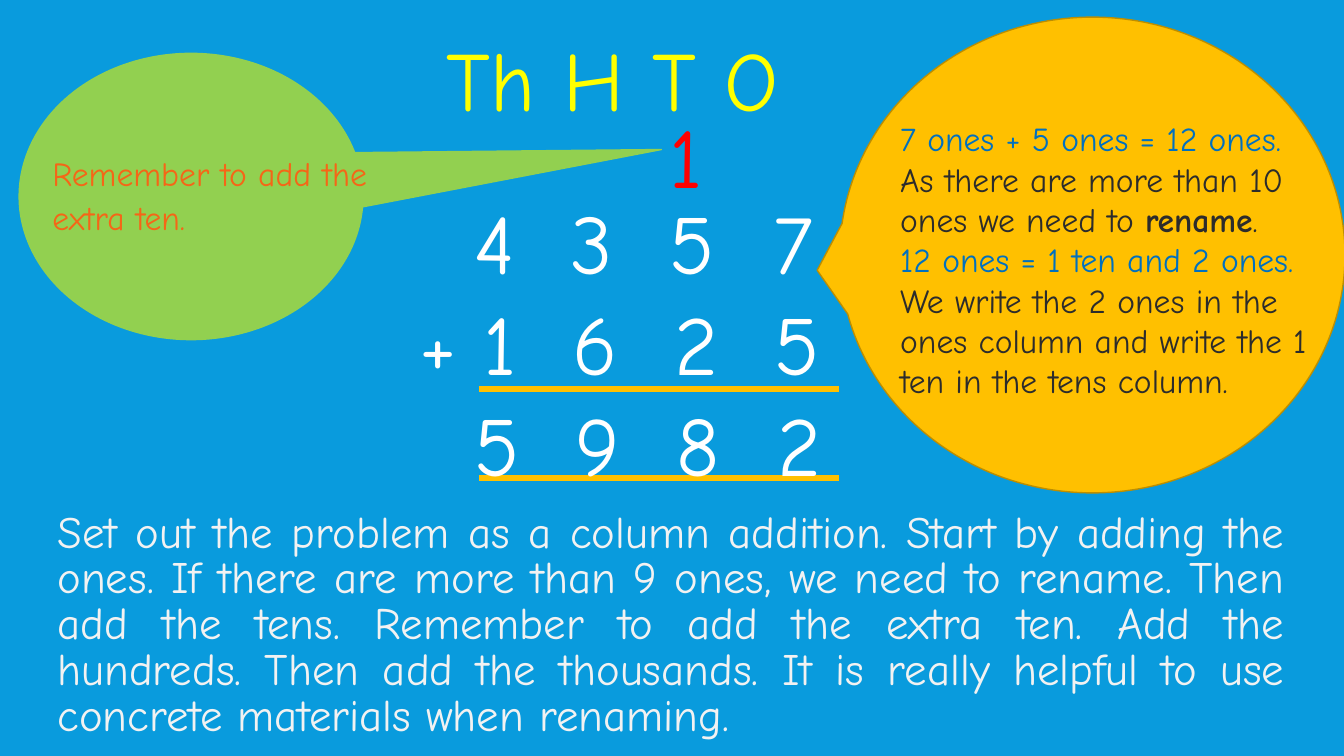
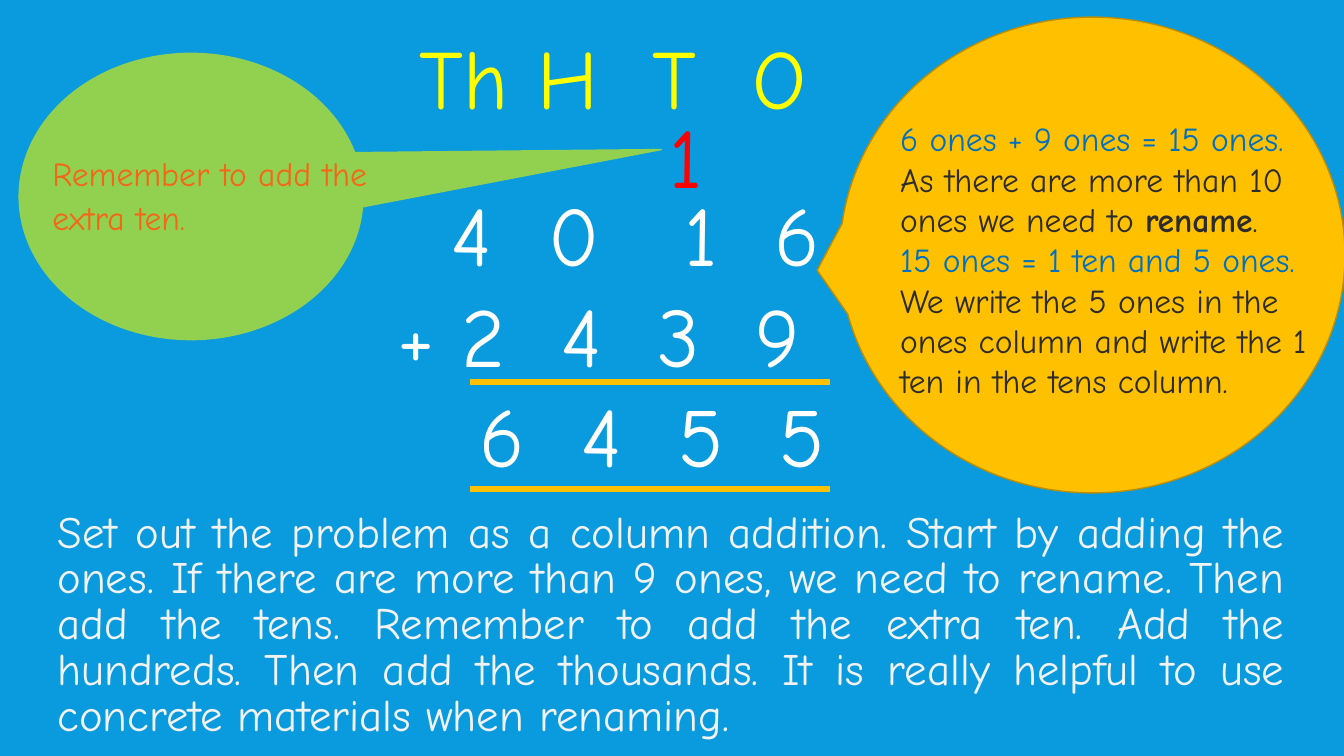
from pptx import Presentation
from pptx import util as u
from pptx.dml.color import RGBColor
from pptx.enum import shapes, text
from pptx.oxml.ns import qn
from lxml import etree


class Theme:
    font = "Comic Neue"
    back = "099BDD"
    head = "FFFF00"
    digit = "FFFFFF"
    carry = "FF0000"
    gold = "FFC000"
    rim = "BD8E00"
    green = "92D050"
    hint = "F56617"
    sum = "0070C0"
    dark = "2C2C2C"
    pale = "F2F2F2"
    big = 60
    mid = 32
    small = 24


def place(shape, box):
    shape.left, shape.top, shape.width, shape.height = map(u.Inches, box)
    return shape


def write(shape, size, lines, stops=(), anchor=text.MSO_ANCHOR.TOP):
    frame = shape.text_frame
    frame.word_wrap = True
    frame.auto_size = text.MSO_AUTO_SIZE.NONE
    frame.vertical_anchor = anchor
    for n, (words, color) in enumerate(lines):
        para = frame.add_paragraph() if n else frame.paragraphs[0]
        para.alignment = text.PP_ALIGN.LEFT
        for k, part in enumerate(words.split("*")):
            run = para.add_run()
            run.text = part
            run.font.bold = k % 2 == 1
        for font in [para.font] + [run.font for run in para.runs]:
            font.name = Theme.font
            font.size = u.Pt(size)
            font.color.rgb = RGBColor.from_string(color)
        if n < len(stops):
            tabs = etree.Element(qn("a:tabLst"))
            for stop in stops[n]:
                gap = u.Inches(stop) - shape.left - frame.margin_left
                etree.SubElement(tabs, qn("a:tab"), pos=str(int(gap)), algn="ctr")
            para._p.pPr.find(qn("a:defRPr")).addprevious(tabs)
    return frame.paragraphs[0]


STEPS = (
    "Set out the problem as a column addition. Start by adding the ones. "
    "If there are more than 9 ones, we need to rename. Then add the tens. "
    "Remember to add the extra ten. Add the hundreds. Then add the thousands. "
    "It is really helpful to use concrete materials when renaming."
)

SUMS = [
    dict(
        head="Th H T O", spot=(4.33, 0.22), cols=[],
        rows=["\t4\t3\t5\t7", "+\t1\t6\t2\t5", "\t5\t9\t8\t2"], grid=(4.06, 1.84),
        stops=[(4.91, 5.87, 6.87, 7.87), (4.96, 5.91, 6.91, 7.91), (4.93, 5.93, 6.93, 7.93)],
        rule=4.75, levels=(3.86, 4.74), ones=(7, 5),
    ),
    dict(
        head="\tTh\tH\tT\tO", spot=(4.06, 0.2), cols=[(4.57, 5.63, 6.69, 7.73)],
        rows=["\t4\t0\t1\t6", "+\t2\t4\t3\t9", "\t6\t4\t5\t5"], grid=(3.84, 1.76),
        stops=[(4.68, 5.70, 6.96, 7.91), (4.80, 5.77, 6.73, 7.72), (4.98, 5.97, 6.96, 7.96)],
        rule=4.66, levels=(3.79, 4.85), ones=(6, 9),
    ),
]

BUBBLES = [
    ((8.33, 0.17, 5.01, 4.72), (-0.545, 0.032), Theme.gold, Theme.rim),
    ((0.19, 0.53, 3.41, 2.84), (1.368, -0.164), Theme.green, Theme.green),
]

deck = Presentation()
deck.slide_width, deck.slide_height = u.Inches(13.33), u.Inches(7.5)
fill = deck.slide_master.background.fill
fill.solid()
fill.fore_color.rgb = RGBColor.from_string(Theme.back)
middle = text.MSO_ANCHOR.MIDDLE

for item in SUMS:
    slide = deck.slides.add_slide(deck.slide_layouts[1])
    parts = slide.shapes

    title = place(parts.title, (*item["spot"], 4.43, 1.11))
    write(title, Theme.big, [(item["head"], Theme.head)], item["cols"])

    body = place(slide.placeholders[1], (0.47, 4.97, 12.38, 2.48))
    para = write(body, Theme.mid, [(STEPS, Theme.pale)], anchor=middle)
    para.alignment = text.PP_ALIGN.JUSTIFY
    para.line_spacing = 0.85
    para.space_before = u.Pt(0)
    props = para._p.pPr
    props.set("marL", "0")
    props.set("indent", "0")
    props.find(qn("a:defRPr")).addprevious(etree.Element(qn("a:buNone")))

    for level in item["levels"]:
        start, end, high = map(u.Inches, (item["rule"], item["rule"] + 3.57, level))
        line = parts.add_connector(shapes.MSO_CONNECTOR.STRAIGHT, start, high, end, high)
        line.line.color.rgb = RGBColor.from_string(Theme.gold)
        line.line.width = u.Pt(4.5)
        etree.SubElement(line._element.spPr, qn("a:effectLst"))

    for box, tip, color, edge in BUBBLES:
        bubble = parts.add_shape(shapes.MSO_SHAPE.OVAL_CALLOUT, *map(u.Inches, box))
        bubble.adjustments[0], bubble.adjustments[1] = tip
        bubble.shadow.inherit = False
        bubble.fill.solid()
        bubble.fill.fore_color.rgb = RGBColor.from_string(color)
        bubble.line.color.rgb = RGBColor.from_string(edge)
        bubble.line.width = u.Pt(1)

    one, two = item["ones"]
    total = one + two
    rest = total - 10
    notes = [
        (f"{one} ones + {two} ones = {total} ones.", Theme.sum),
        ("As there are more than 10 ones we need to *rename*.", Theme.dark),
        (f"{total} ones = 1 ten and {rest} ones.", Theme.sum),
        (f"We write the {rest} ones in the ones column and write the 1 ten in the tens column.", Theme.dark),
    ]
    note = parts.add_textbox(*map(u.Inches, (8.83, 1.01, 4.43, 3.13)))
    write(note, Theme.small, notes, anchor=middle)

    grid = parts.add_textbox(*map(u.Inches, (*item["grid"], 5.22, 3.13)))
    write(grid, Theme.big, [(row, Theme.digit) for row in item["rows"]], item["stops"])

    carry = parts.add_textbox(*map(u.Inches, (6.54, 0.99, 0.62, 1.11)))
    write(carry, Theme.big, [("1", Theme.carry)])

    hint = parts.add_textbox(*map(u.Inches, (0.42, 0.35, 3.41, 3.13)))
    para = write(hint, Theme.small, [("Remember to add the extra ten.", Theme.hint)], anchor=middle)
    para.line_spacing = 1.1

deck.save("out.pptx")
